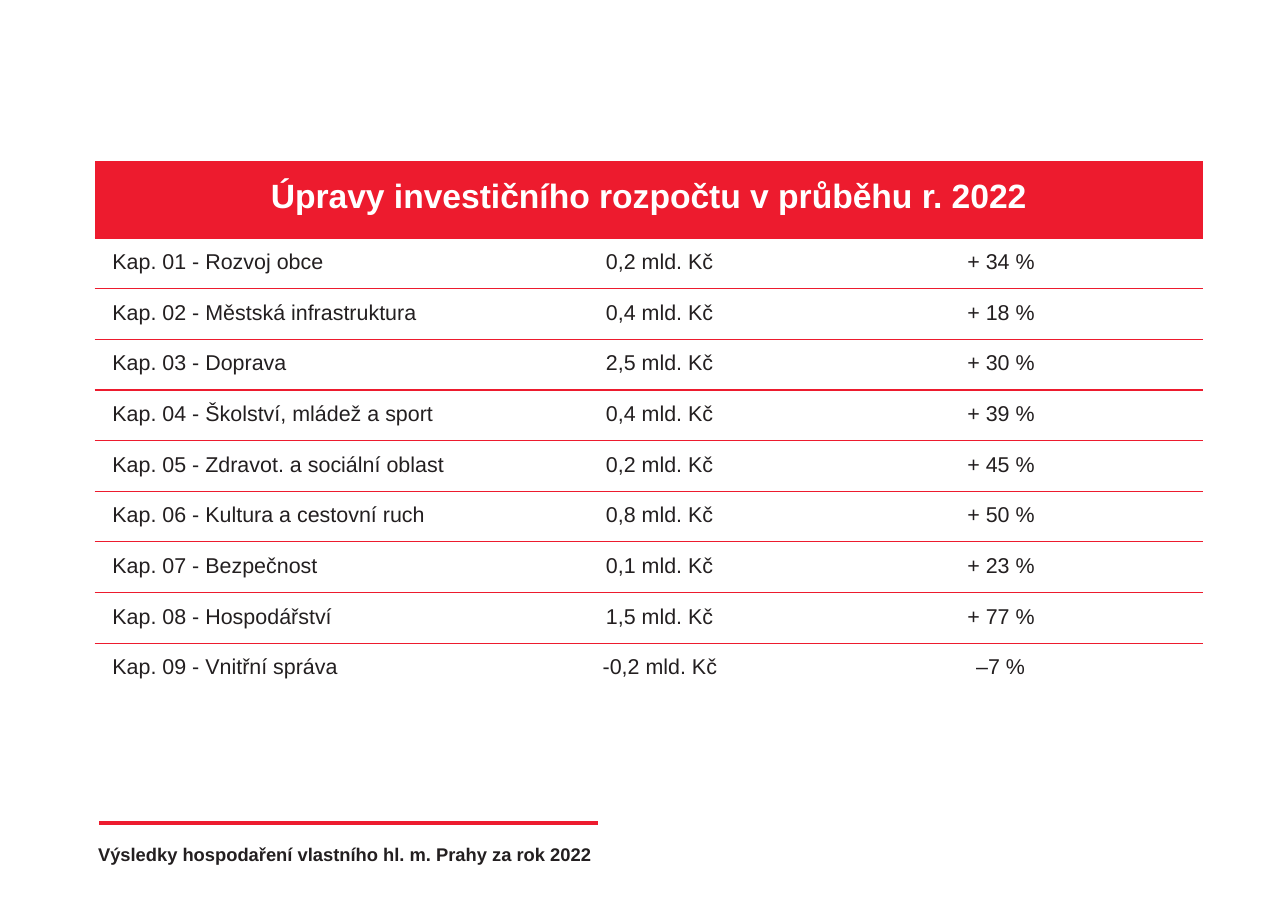
from lxml import etree
from pptx import Presentation
from pptx import util as u
from pptx.dml.color import RGBColor
from pptx.enum import shapes, text
from pptx.oxml import ns

# Content
HEADING = "Úpravy investičního rozpočtu v průběhu r. 2022"
CHAPTERS = [
    ("Kap. 01 - Rozvoj obce", "0,2 mld. Kč", "+ 34 %"),
    ("Kap. 02 - Městská infrastruktura", "0,4 mld. Kč", "+ 18 %"),
    ("Kap. 03 - Doprava", "2,5 mld. Kč", "+ 30 %"),
    ("Kap. 04 - Školství, mládež a sport", "0,4 mld. Kč", "+ 39 %"),
    ("Kap. 05 - Zdravot. a sociální oblast", "0,2 mld. Kč", "+ 45 %"),
    ("Kap. 06 - Kultura a cestovní ruch", "0,8 mld. Kč", "+ 50 %"),
    ("Kap. 07 - Bezpečnost", "0,1 mld. Kč", "+ 23 %"),
    ("Kap. 08 - Hospodářství", "1,5 mld. Kč", "+ 77 %"),
    ("Kap. 09 - Vnitřní správa", "-0,2 mld. Kč", "–7 %"),
]
FOOTER = "Výsledky hospodaření vlastního hl. m. Prahy za rok 2022"

RED, INK, WHITE = "ED1B2E", "231F20", "FFFFFF"
COLUMN_WIDTHS = (3.75, 2.98, 3.33)
INDENTS = (0.16, 0.89, 1.19)
LAST_INDENTS = (0.16, 0.86, 1.27)
HEADING_HEIGHT, ROW_HEIGHT, LAST_HEIGHT = 0.7, 0.46, 0.35


def color(value):
    return RGBColor.from_string(value)


def write(frame, words, size, ink, bold=False):
    span = frame.paragraphs[0].add_run()
    span.text = words
    span.font.name = "Arial"
    span.font.size = u.Pt(size)
    span.font.bold = bold
    span.font.color.rgb = color(ink)


def set_margins(target, left, top):
    target.margin_left, target.margin_top = u.Inches(left), u.Inches(top)
    target.margin_right = target.margin_bottom = 0


def set_borders(cell, ruled_sides):
    properties = cell._tc.get_or_add_tcPr()
    for side in "LRTB":
        line = etree.SubElement(properties, ns.qn(f"a:ln{side}"), w=str(u.Pt(1)))
        if side in ruled_sides:
            fill = etree.SubElement(line, ns.qn("a:solidFill"))
            etree.SubElement(fill, ns.qn("a:srgbClr"), val=RED)
        else:
            etree.SubElement(line, ns.qn("a:noFill"))


deck = Presentation()
deck.slide_width, deck.slide_height = u.Inches(11.69), u.Inches(8.27)
page = deck.slides.add_slide(deck.slide_layouts[6])

# Table grid
heights = [HEADING_HEIGHT] + [ROW_HEIGHT] * (len(CHAPTERS) - 1) + [LAST_HEIGHT]
table = page.shapes.add_table(
    len(heights), len(COLUMN_WIDTHS), u.Inches(0.86), u.Inches(1.46),
    u.Inches(sum(COLUMN_WIDTHS)), u.Inches(sum(heights))).table
table.first_row = table.horz_banding = False
for column, width in zip(table.columns, COLUMN_WIDTHS):
    column.width = u.Inches(width)
for row, height in zip(table.rows, heights):
    row.height = u.Inches(height)

# Heading row
for cell in table.rows[0].cells:
    set_borders(cell, "B")
    cell.fill.solid()
    cell.fill.fore_color.rgb = color(RED)
heading = table.cell(0, 0)
heading.merge(table.cell(0, len(COLUMN_WIDTHS) - 1))
set_margins(heading, 0, 0.16)
write(heading.text_frame, HEADING, 22, WHITE, bold=True)
heading.text_frame.paragraphs[0].alignment = text.PP_ALIGN.CENTER

# Budget chapters
for number, chapter in enumerate(CHAPTERS, 1):
    is_last = number == len(CHAPTERS)
    indents = LAST_INDENTS if is_last else INDENTS
    for cell, words, indent in zip(table.rows[number].cells, chapter, indents):
        set_borders(cell, "T" if is_last else "TB")
        cell.fill.background()
        set_margins(cell, indent, 0.11)
        write(cell.text_frame, words, 14, INK)

# Footer rule
rule = page.shapes.add_connector(
    shapes.MSO_CONNECTOR.STRAIGHT,
    u.Inches(0.9), u.Inches(7.47), u.Inches(5.43), u.Inches(7.47))
rule.line.color.rgb = color(RED)
rule.line.width = u.Pt(3)
etree.SubElement(rule._element.spPr, ns.qn("a:effectLst"))

# Footer text
box = page.shapes.add_textbox(
    u.Inches(0.88), u.Inches(7.64), u.Inches(4.55), u.Inches(0.21))
box.text_frame.word_wrap = True
set_margins(box.text_frame, 0.01, 0.01)
write(box.text_frame, FOOTER, 12, INK, bold=True)

deck.save("out.pptx")
